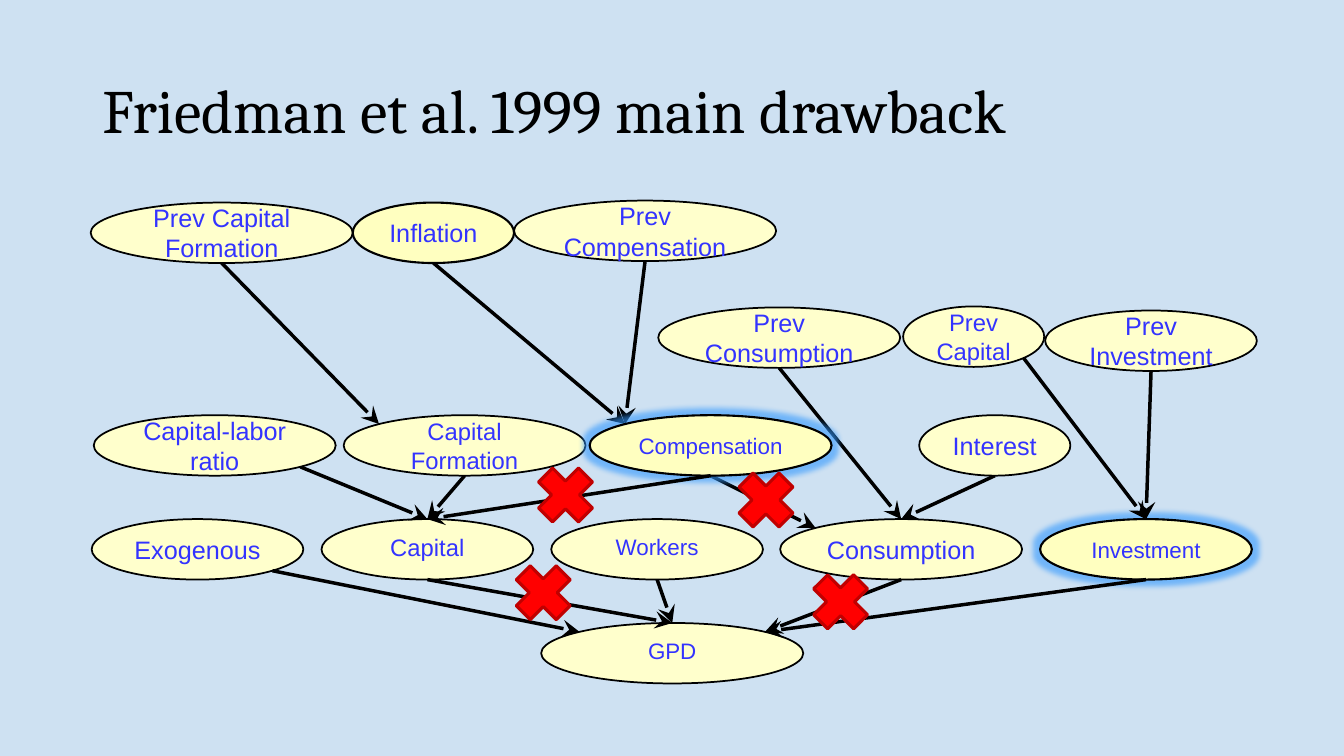
from lxml.etree import SubElement
from pptx import Presentation
from pptx.dml.color import RGBColor
from pptx.enum.shapes import MSO_CONNECTOR, MSO_SHAPE
from pptx.enum.text import MSO_ANCHOR, PP_ALIGN
from pptx.oxml.ns import qn
from pptx.util import Pt

SKY = RGBColor(0xCE, 0xE1, 0xF2)
BLACK = RGBColor(0x00, 0x00, 0x00)
BLUE = RGBColor(0x33, 0x33, 0xFF)
CREAM = RGBColor(0xFF, 0xFF, 0xCC)
YELLOW = RGBColor(0xFF, 0xFF, 0xC0)
RED = RGBColor(0xFF, 0x00, 0x00)
DARK_RED = RGBColor(0xC0, 0x00, 0x00)
GLOW = RGBColor(0x33, 0x99, 0xFF)

NODE_HEIGHT = 43.2
CROSS_SIZE = 40.3

# name: left, top, width, font size, line spacing
LOWER_NODES = {
    "GPD": (386.6, 445, 187.2, 16, 0.8),
    "Investment": (743, 370.8, 151.2, 16, 1),
    "Exogenous": (65.5, 370.8, 151.2, 18, 1),
    "Workers": (393.8, 370.8, 151.2, 16, 0.8),
    "Capital": (229.7, 370.8, 151.2, 17, 0.8),
    "Consumption": (557.3, 370.8, 172.8, 18, 1),
}
UPPER_NODES = {
    "Prev Capital Formation": (64.8, 144.7, 187.2, 18, 1),
    "Prev Compensation": (367.2, 143.3, 187.2, 18, 1),
    "Inflation": (252, 144.7, 115.2, 18, 1),
    "Prev Consumption": (470.2, 219.6, 172.8, 18, 1),
    "Prev Capital": (645.1, 218.9, 100.8, 17, 1),
    "Prev Investment": (746.6, 221.8, 151.2, 18, 1),
    "Capital-labor ratio": (67, 296.6, 172.8, 18, 1),
    "Interest": (656.6, 296.6, 108, 18, 1),
    "Capital Formation": (245.5, 296.6, 172.8, 17, 1),
    "Compensation": (421.2, 296.6, 172.8, 16, 1),
}
NODES = {**LOWER_NODES, **UPPER_NODES}
HIGHLIGHTED = ("Investment", "Inflation", "Compensation")
GLOWING = ("Investment", "Compensation")

# Points on an ellipse as fractions of its width and height
SITES = {
    "top": (0.5, 0),
    "bottom": (0.5, 1),
    "top left": (0.146, 0.146),
    "top right": (0.854, 0.146),
    "bottom right": (0.854, 0.854),
}
ARROWS = [
    ("Prev Capital Formation", "bottom", "Capital Formation", "top left"),
    ("Prev Compensation", "bottom", "Compensation", "top left"),
    ("Prev Investment", "bottom", "Investment", "top"),
    ("Inflation", "bottom", "Compensation", "top left"),
    ("Prev Consumption", "bottom", "Consumption", "top"),
    ("Compensation", "bottom", "Consumption", "top left"),
    ("Interest", "bottom", "Consumption", "top"),
    ("Consumption", "bottom", "GPD", "top right"),
    ("Investment", "bottom", "GPD", "top right"),
    ("Workers", "bottom", "GPD", "top"),
    ("Capital", "bottom", "GPD", "top"),
    ("Exogenous", "bottom right", "GPD", "top left"),
    ("Capital-labor ratio", "bottom right", "Capital", "top"),
    ("Capital Formation", "bottom", "Capital", "top"),
    ("Prev Capital", "bottom right", "Investment", "top"),
]
FRONT_ARROWS = [("Compensation", "bottom", "Capital", "top")]
CROSSES = [(580.3, 409.7), (527, 337), (383.8, 333.4), (367.9, 403.2)]

prs = Presentation()
prs.slide_width, prs.slide_height = Pt(960), Pt(540)
slide = prs.slides.add_slide(prs.slide_layouts[5])
slide.background.fill.solid()
slide.background.fill.fore_color.rgb = SKY

title = slide.shapes.title
title.left, title.top, title.width, title.height = Pt(66), Pt(29), Pt(828), Pt(104.4)
tf = title.text_frame
tf.text = "Friedman et al. 1999 main drawback"
tf.vertical_anchor = MSO_ANCHOR.MIDDLE
p = tf.paragraphs[0]
p.alignment = PP_ALIGN.LEFT
p.line_spacing = 0.9
p.font.name, p.font.size = "Cambria", Pt(44)
p.font.color.rgb = BLACK


def add_figure(preset, box, fill, line, line_width):
    sp = slide.shapes.add_shape(preset, *map(Pt, box))
    sp.shadow.inherit = False
    sp.fill.solid()
    sp.fill.fore_color.rgb = fill
    sp.line.color.rgb = line
    sp.line.width = Pt(line_width)
    return sp


def site_point(name, site):
    """Return the x and y of a named point on a node's outline."""
    left, top, width = NODES[name][:3]
    fx, fy = SITES[site]
    return Pt(left + fx * width), Pt(top + fy * NODE_HEIGHT)


for nodes, arrows in ((LOWER_NODES, ARROWS), (UPPER_NODES, FRONT_ARROWS)):
    for name, (left, top, width, size, spacing) in nodes.items():
        box = (left, top, width, NODE_HEIGHT)
        highlighted = name in HIGHLIGHTED
        sp = add_figure(MSO_SHAPE.OVAL, box, YELLOW if highlighted else CREAM,
                        BLACK, 1.5 if highlighted else 1.25)
        if name in GLOWING:
            effects = sp._element.spPr.find(qn("a:effectLst"))
            glow = SubElement(effects, qn("a:glow"), rad=str(Pt(8)))
            color = SubElement(glow, qn("a:srgbClr"), val=str(GLOW))
            SubElement(color, qn("a:alpha"), val="60000")
        tf = sp.text_frame
        tf.word_wrap = True
        tf.vertical_anchor = MSO_ANCHOR.MIDDLE
        if highlighted:
            tf.margin_top = tf.margin_bottom = Pt(7.2)
        p = tf.paragraphs[0]
        p.text = name
        p.alignment = PP_ALIGN.CENTER
        p.line_spacing = spacing
        p.font.name, p.font.size = "Arial", Pt(size)
        p.font.color.rgb = BLUE

    for source, source_site, target, target_site in arrows:
        arrow = slide.shapes.add_connector(
            MSO_CONNECTOR.STRAIGHT,
            *site_point(source, source_site), *site_point(target, target_site))
        arrow.line.color.rgb = BLACK
        arrow.line.width = Pt(2.5)
        SubElement(arrow.line._get_or_add_ln(), qn("a:tailEnd"),
                   type="stealth", w="lg", len="lg")
        SubElement(arrow._element.spPr, qn("a:effectLst"))

for left, top in CROSSES:
    cross = add_figure(MSO_SHAPE.CROSS, (left, top, CROSS_SIZE, CROSS_SIZE),
                       RED, DARK_RED, 2.25)
    cross.adjustments[0] = 0.325
    cross.rotation = 315

prs.save("out.pptx")
